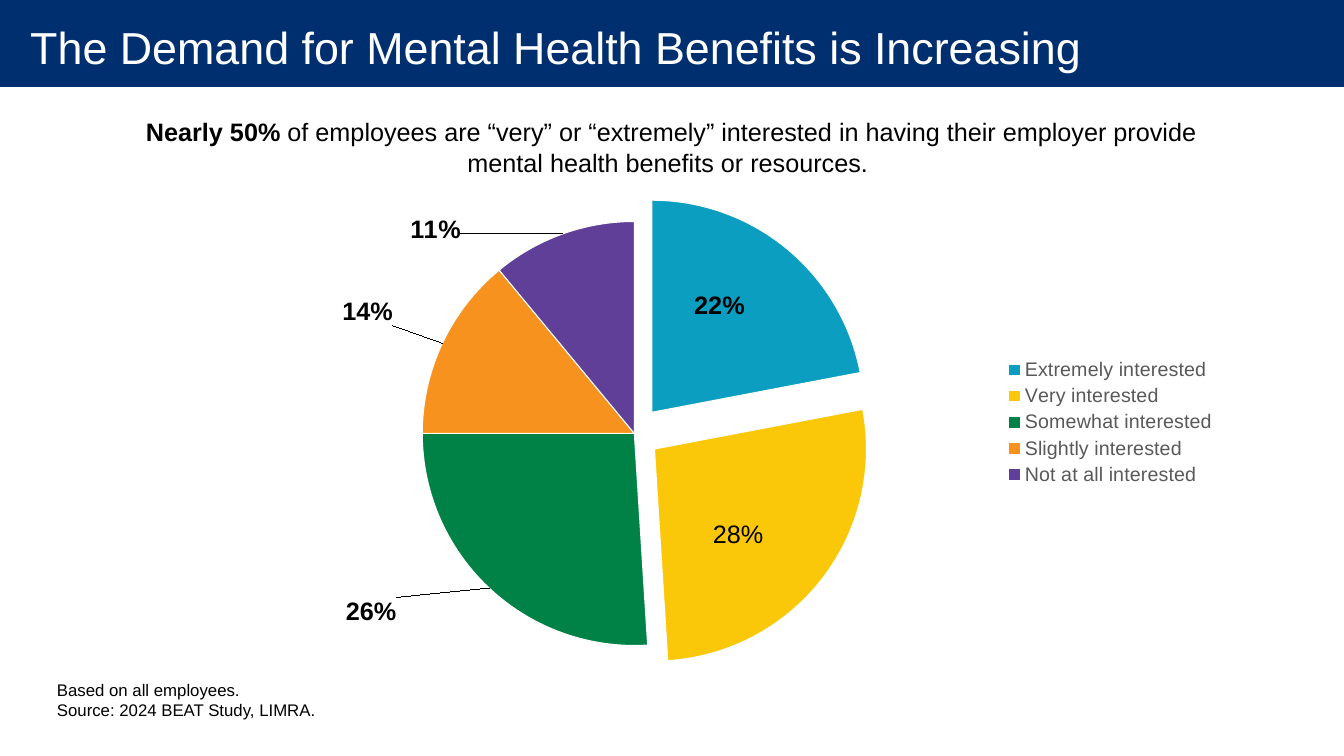
from dataclasses import dataclass

from lxml.etree import SubElement
from pptx import Presentation
from pptx.chart.data import CategoryChartData
from pptx.dml.color import RGBColor
from pptx.enum.chart import XL_CHART_TYPE, XL_LABEL_POSITION, XL_LEGEND_POSITION
from pptx.enum.shapes import MSO_SHAPE
from pptx.enum.text import MSO_ANCHOR, PP_ALIGN
from pptx.oxml import parse_xml
from pptx.oxml.ns import nsdecls, qn
from pptx.util import Inches, Pt

WIDE, HIGH = Inches(13.33), Inches(7.5)
FACE = "Arial"


@dataclass
class Box:
    left: float
    top: float
    width: float
    height: float

    def place(self) -> tuple[int, ...]:
        return (int(self.left * WIDE), int(self.top * HIGH),
                int(self.width * WIDE), int(self.height * HIGH))


@dataclass
class Slice:
    name: str
    value: int
    color: str
    shift: tuple[float, float]
    burst: int = 0
    label: str = ""
    bold: bool = True


SLICES = [
    Slice("Extremely interested", 22, "0B9EC1", (0, -0.05), 13, "22%"),
    Slice("Very interested", 27, "FAC809", (0, 0.04), 12, "28%", False),
    Slice("Somewhat interested", 26, "008145", (-0.08, 0.01)),
    Slice("Slightly interested", 14, "F7921E", (-0.04, -0.03)),
    Slice("Not at all interested", 11, "603F99", (-0.09, 0.03)),
]


def paint(code: str) -> RGBColor:
    return RGBColor.from_string(code)


def style(font, size: float, color: str = "000000", bold: bool = False) -> None:
    font.name, font.size, font.bold = FACE, Pt(size), bold
    font.color.rgb = paint(color)


def write(frame, lines: list[list[tuple[str, bool]]], *, size: float,
          color: str = "000000", align=PP_ALIGN.LEFT, wrap: bool = True) -> None:
    frame.word_wrap = wrap
    for row, parts in enumerate(lines):
        para = frame.add_paragraph() if row else frame.paragraphs[0]
        para.alignment = align
        for words, bold in parts:
            run = para.add_run()
            run.text = words
            style(run.font, size, color, bold)


def layout(**parts) -> object:
    root = parse_xml(f"<c:layout {nsdecls('c')}/>")
    inner = SubElement(root, qn("c:manualLayout"))
    for tag, value in parts.items():
        SubElement(inner, qn(f"c:{tag}")).set("val", str(value))
    return root


def head(slide) -> None:
    bar = slide.shapes.add_shape(MSO_SHAPE.RECTANGLE, *Box(0, 0, 1, 0.115).place())
    bar.shadow.inherit = False
    bar.fill.solid()
    bar.fill.fore_color.rgb = paint("002F70")
    bar.line.fill.background()
    title = slide.shapes.title
    title.left, title.top, title.width, title.height = Box(0, -0.004, 1, 0.13).place()
    bar.element.addnext(title.element)
    frame = title.text_frame
    frame.vertical_anchor = MSO_ANCHOR.MIDDLE
    frame.margin_left, frame.margin_right = Inches(0.3), Inches(0.2)
    frame.margin_top = frame.margin_bottom = 0
    write(frame, [[("The Demand for Mental Health Benefits is Increasing", False)]],
          size=32, color="FFFFFF", wrap=False)


def pie(slide, box: Box) -> None:
    data = CategoryChartData()
    data.categories = [part.name for part in SLICES]
    data.add_series("Series 1", [part.value for part in SLICES])
    chart = slide.shapes.add_chart(XL_CHART_TYPE.PIE, *box.place(), data).chart
    style(chart.font, 18)
    chart.has_title = False
    chart.has_legend = True
    chart.legend.position = XL_LEGEND_POSITION.RIGHT
    chart.legend.include_in_layout = False
    style(chart.legend.font, 14, "595959")

    plot = chart.plots[0]
    plot.vary_by_categories = True
    series = plot.series[0]
    tags = series.data_labels
    tags.show_percentage, tags.show_value = True, False
    tags.number_format, tags.number_format_is_linked = "0%", False
    style(tags.font, 18, bold=True)

    for spot, part in enumerate(SLICES):
        point = series.points[spot]
        point.format.fill.solid()
        point.format.fill.fore_color.rgb = paint(part.color)
        point.format.line.color.rgb = paint("FFFFFF")
        point.format.line.width = Pt(0.75)
        label = point.data_label
        if part.label:
            write(label.text_frame, [[(part.label, part.bold)]], size=18,
                  align=PP_ALIGN.CENTER)
            label.position = XL_LABEL_POSITION.CENTER
        else:
            style(label.font, 18, bold=part.bold)
            label.position = XL_LABEL_POSITION.OUTSIDE_END

    root = chart.element
    for node, part in zip(root.xpath(".//c:dPt"), SLICES):
        if part.burst:
            burst = parse_xml(f'<c:explosion {nsdecls("c")} val="{part.burst}"/>')
            node.find(qn("c:spPr")).addprevious(burst)
    for node, part in zip(root.xpath(".//c:dLbl"), SLICES):
        for old in node.findall(qn("c:layout")):
            node.remove(old)
        across, down = part.shift
        node.find(qn("c:idx")).addnext(layout(x=across, y=down))
        node.find(qn("c:showVal")).set("val", "0")
        node.find(qn("c:showPercent")).set("val", "1")
    group = root.xpath(".//c:ser/c:dLbls")[0]
    for old in group.findall(qn("c:showLeaderLines")):
        group.remove(old)
    SubElement(group, qn("c:showLeaderLines")).set("val", "1")
    area = root.xpath(".//c:plotArea")[0]
    for old in area.findall(qn("c:layout")):
        area.remove(old)
    area.insert(0, layout(layoutTarget="inner", xMode="edge", yMode="edge",
                          x=0.273, y=0.102, w=0.385, h=0.841))


def main() -> None:
    deck = Presentation()
    deck.slide_width, deck.slide_height = WIDE, HIGH
    slide = deck.slides.add_slide(deck.slide_layouts[5])
    head(slide)
    lead = slide.shapes.add_textbox(*Box(0.098, 0.148, 0.803, 0.095).place())
    write(lead.text_frame, [[
        ("Nearly 50% ", True),
        ("of employees are “very” or “extremely” interested in having their "
         "employer provide mental health benefits or resources. ", False),
    ]], size=18, align=PP_ALIGN.CENTER)
    pie(slide, Box(0.088, 0.225, 0.825, 0.667))
    note = slide.shapes.add_textbox(*Box(0.035, 0.892, 0.296, 0.067).place())
    write(note.text_frame, [[("Based on all employees.", False)],
                            [("Source: 2024 BEAT Study, LIMRA.", False)]], size=12)
    deck.save("out.pptx")


if __name__ == "__main__":
    main()
